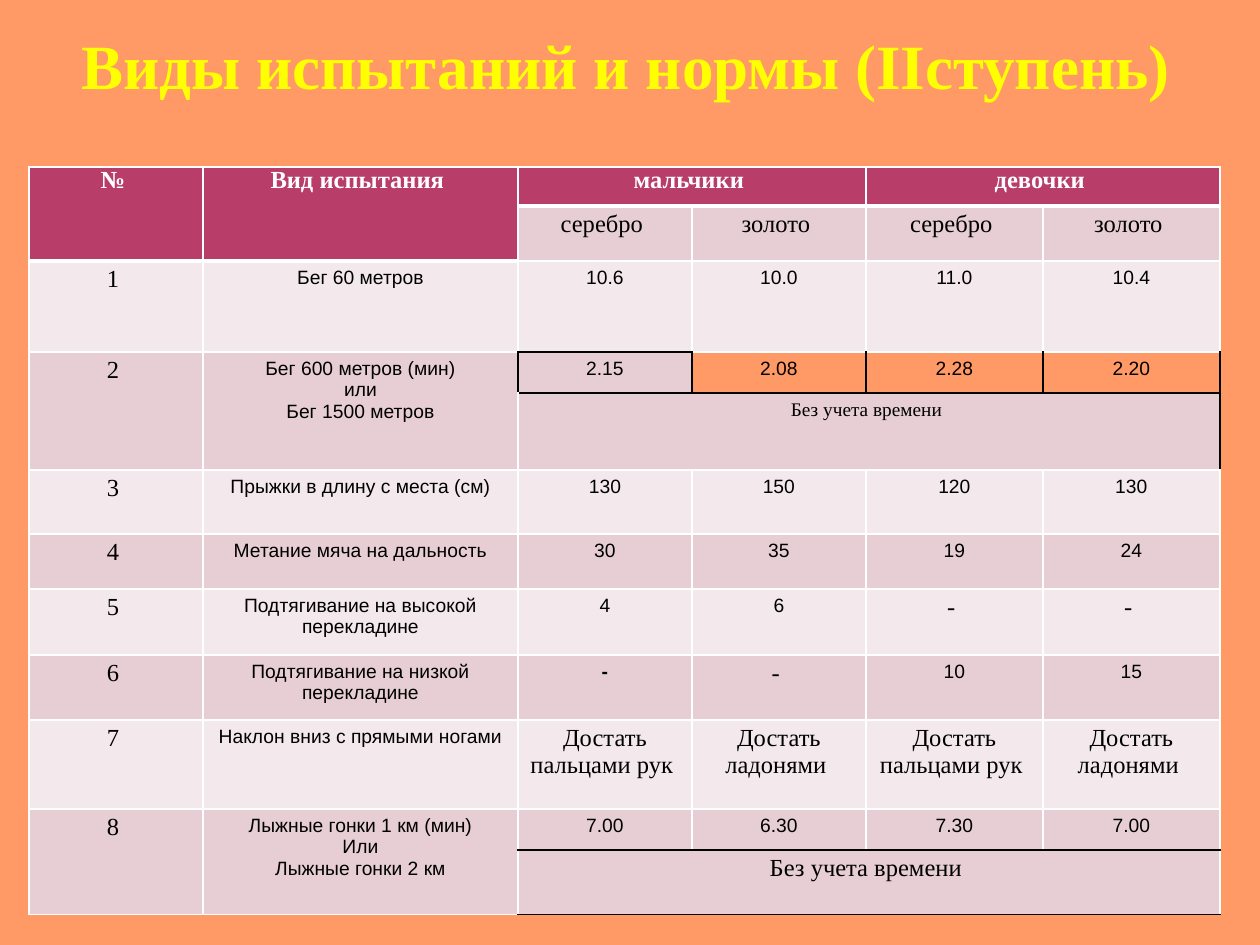
from dataclasses import dataclass, field
from typing import Optional

from lxml.etree import SubElement
from pptx import Presentation
from pptx.dml.color import RGBColor
from pptx.enum.text import MSO_AUTO_SIZE, PP_ALIGN
from pptx.oxml.ns import qn
from pptx.util import Emu, Pt

EMU_PER_PX = 914400 // 126


@dataclass(frozen=True)
class Theme:
    """Colours, fonts and type sizes of the slide."""
    background: str = "FF9966"
    title: str = "FFFF00"
    header: str = "B83D68"
    band: str = "E6CED4"
    light: str = "F3E8EB"
    white: str = "FFFFFF"
    ink: str = "000000"
    serif: str = "Times New Roman"
    sans: str = "Arial"
    title_size: int = 36
    label_size: int = 14
    body_size: int = 11
    header_leading: float = 12.3
    thin: int = 1
    thick: int = 3


THEME = Theme()


@dataclass(frozen=True)
class TextStyle:
    """Look of the text in one cell."""
    font: str
    size: int
    color: str = THEME.ink
    bold: bool = False
    leading: Optional[float] = None
    side: int = 11
    top: int = 5


HEADER = TextStyle(THEME.serif, THEME.label_size, THEME.white, True, THEME.header_leading)
LABEL = TextStyle(THEME.serif, THEME.label_size)
BODY = TextStyle(THEME.sans, THEME.body_size, side=13, top=6)
BOLD_BODY = TextStyle(THEME.sans, THEME.body_size, bold=True, side=13, top=6)
NOTE = TextStyle(THEME.serif, THEME.body_size, side=13, top=6)


@dataclass(frozen=True)
class Norm:
    """One table cell with its place, span and borders."""
    row: int
    column: int
    text: str
    style: TextStyle
    fill: Optional[str]
    rows: int = 1
    columns: int = 1
    black: str = ""
    thick: str = ""


@dataclass(frozen=True)
class Trial:
    """One numbered trial and its four norms."""
    row: int
    name: str
    norms: tuple[str, ...]
    style: TextStyle = BODY
    rows: int = 1
    exceptions: dict[int, TextStyle] = field(default_factory=dict)


TABLE_LEFT, TABLE_TOP = 29, 167
COLUMN_WIDTHS = (174, 315, 174, 174, 177, 177)
ROW_HEIGHTS = (39, 55, 91, 41, 77, 64, 55, 66, 65, 89, 41, 65)
REACH = ("Достать пальцами рук ", "Достать ладонями ") * 2
TRIALS = (
    Trial(2, "Бег 60 метров", ("10.6", "10.0", "11.0", "10.4")),
    Trial(3, "Бег 600 метров (мин)\nили\nБег 1500 метров", ("2.15", "2.08", "2.28", "2.20"), rows=2),
    Trial(5, "Прыжки в длину с места (см)", ("130", "150", "120", "130")),
    Trial(6, "Метание мяча на дальность", ("30", "35", "19", "24")),
    Trial(7, "Подтягивание на высокой перекладине", ("4", "6", "- ", "- "),
          exceptions={2: LABEL, 3: LABEL}),
    Trial(8, "Подтягивание на низкой перекладине", ("-", "- ", "10", "15"),
          exceptions={0: BOLD_BODY, 1: LABEL}),
    Trial(9, "Наклон вниз с прямыми ногами", REACH, LABEL),
    Trial(10, "Лыжные гонки 1 км (мин)\nИли\nЛыжные гонки 2 км", ("7.00", "6.30", "7.30", "7.00"), rows=2),
)
UNTIMED = "Без учета времени "


def px(length: int) -> Emu:
    """Turn whole pixels into EMU."""
    return Emu(length * EMU_PER_PX)


def header_norms() -> list[Norm]:
    """List the cells of the two heading rows."""
    headings = [
        Norm(0, 0, "№ ", HEADER, THEME.header, rows=2, thick="B"),
        Norm(0, 1, "Вид испытания ", HEADER, THEME.header, rows=2, thick="B"),
        Norm(0, 2, "мальчики ", HEADER, THEME.header, columns=2, thick="B"),
        Norm(0, 4, "девочки ", HEADER, THEME.header, columns=2, thick="B"),
    ]
    medals = ("серебро ", "золото ") * 2
    return headings + [Norm(1, column, medal, LABEL, THEME.band, thick="T")
                       for column, medal in enumerate(medals, 2)]


def trial_norms(number: int, trial: Trial) -> list[Norm]:
    """List the cells of one trial."""
    fill = THEME.light if number % 2 else THEME.band
    thick = "T" if number == 1 else ""
    cells = [
        Norm(trial.row, 0, f"{number} ", LABEL, fill, rows=trial.rows, thick=thick),
        Norm(trial.row, 1, trial.name, BODY, fill, rows=trial.rows, thick=thick),
    ]
    for index, norm in enumerate(trial.norms):
        black = {1: "B" if index == 0 else "", 2: "LTRB" if index == 0 else "LRB", 8: "B"}.get(number, "")
        norm_fill = None if number == 2 and index else fill
        style = trial.exceptions.get(index, trial.style)
        cells.append(Norm(trial.row, index + 2, norm, style, norm_fill, black=black))
    if trial.rows == 2:
        style, black = (NOTE, "TR") if number == 2 else (LABEL, "TB")
        cells.append(Norm(trial.row + 1, 2, UNTIMED, style, fill, columns=4, black=black))
    return cells


def add_run(paragraph, text: str, style: TextStyle) -> None:
    """Add one styled run to a paragraph."""
    run = paragraph.add_run()
    run.text = text
    run.font.name, run.font.size, run.font.bold = style.font, Pt(style.size), style.bold
    run.font.color.rgb = RGBColor.from_string(style.color)


def set_borders(cell, norm: Norm) -> None:
    """Draw the four borders of a cell ahead of its fill."""
    properties = cell._tc.get_or_add_tcPr()
    for position, side in enumerate("LRTB"):
        width = THEME.thick if side in norm.thick else THEME.thin
        line = SubElement(properties, qn(f"a:ln{side}"), w=str(Pt(width)))
        solid = SubElement(line, qn("a:solidFill"))
        SubElement(solid, qn("a:srgbClr"), val=THEME.ink if side in norm.black else THEME.white)
        properties.insert(position, line)


def draw_norm(table, norm: Norm) -> None:
    """Merge, fill and letter one table cell."""
    cell = table.cell(norm.row, norm.column)
    if norm.rows * norm.columns > 1:
        cell.merge(table.cell(norm.row + norm.rows - 1, norm.column + norm.columns - 1))
    if norm.fill:
        cell.fill.solid()
        cell.fill.fore_color.rgb = RGBColor.from_string(norm.fill)
    else:
        cell.fill.background()
    set_borders(cell, norm)
    style = norm.style
    cell.margin_left = cell.margin_right = px(style.side)
    cell.margin_top = cell.margin_bottom = px(style.top)
    for index, line in enumerate(norm.text.split("\n")):
        paragraph = cell.text_frame.add_paragraph() if index else cell.text_frame.paragraphs[0]
        paragraph.alignment = PP_ALIGN.CENTER
        if style.leading:
            paragraph.line_spacing = Pt(style.leading)
        add_run(paragraph, line, style)


def draw_table(slide) -> None:
    """Draw the table of trials and norms."""
    table = slide.shapes.add_table(
        len(ROW_HEIGHTS), len(COLUMN_WIDTHS), px(TABLE_LEFT), px(TABLE_TOP),
        px(sum(COLUMN_WIDTHS)), px(sum(ROW_HEIGHTS))).table
    table.first_row = table.horz_banding = False
    for column, width in zip(table.columns, COLUMN_WIDTHS):
        column.width = px(width)
    for row, height in zip(table.rows, ROW_HEIGHTS):
        row.height = px(height)
    for norm in header_norms():
        draw_norm(table, norm)
    for number, trial in enumerate(TRIALS, 1):
        for norm in trial_norms(number, trial):
            draw_norm(table, norm)


def draw_title(slide) -> None:
    """Draw the slide title."""
    frame = slide.shapes.add_textbox(px(69), px(20), px(1131), px(89)).text_frame
    frame.word_wrap = True
    frame.auto_size = MSO_AUTO_SIZE.SHAPE_TO_FIT_TEXT
    add_run(frame.paragraphs[0], "Виды испытаний и нормы (IIступень)",
            TextStyle(THEME.serif, THEME.title_size, THEME.title, True))


def main() -> None:
    """Build and save the slide."""
    deck = Presentation()
    deck.slide_width, deck.slide_height = px(1260), px(945)
    slide = deck.slides.add_slide(deck.slide_layouts[6])
    slide.background.fill.solid()
    slide.background.fill.fore_color.rgb = RGBColor.from_string(THEME.background)
    draw_table(slide)
    draw_title(slide)
    deck.save("out.pptx")


if __name__ == "__main__":
    main()
